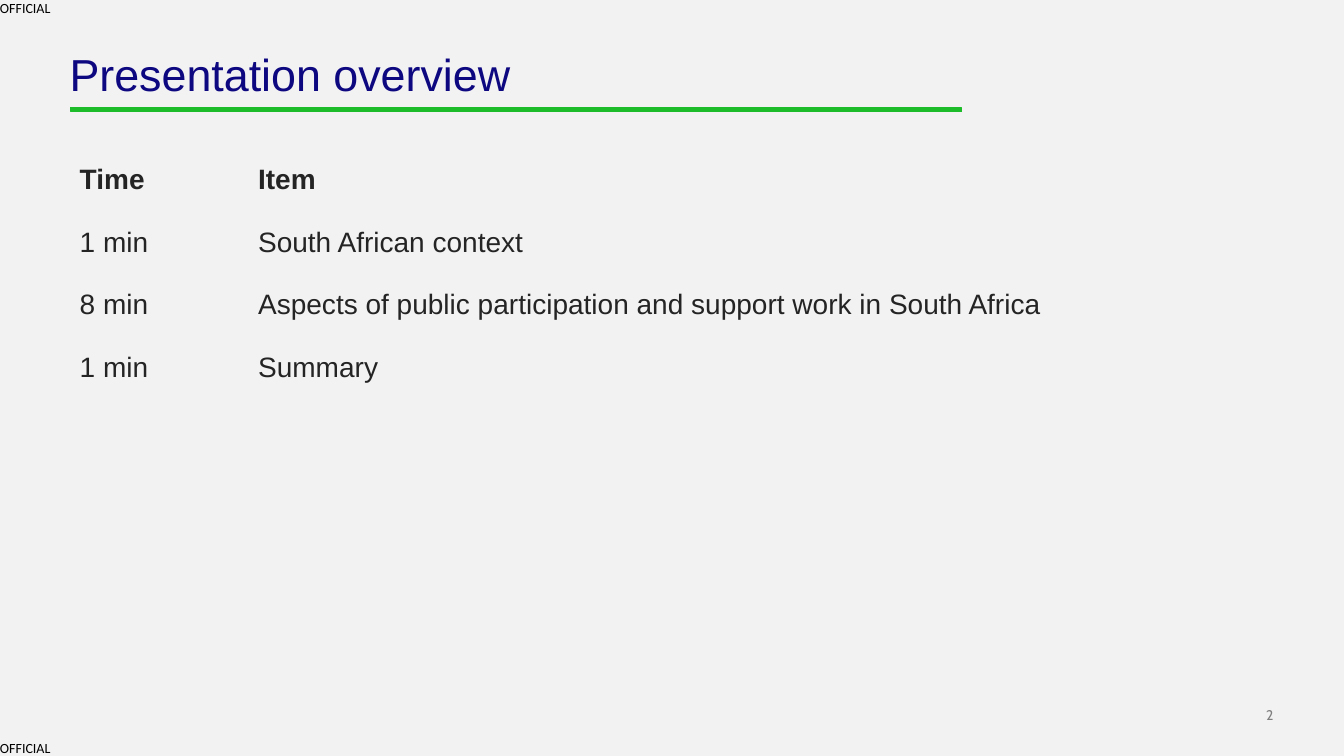
from pptx import Presentation
from pptx.dml.color import RGBColor
from pptx.enum.text import MSO_ANCHOR, PP_ALIGN
from pptx.oxml.ns import qn
from pptx.util import Pt

PX = 9144
NO_GRID_STYLE = "{2D5ABB26-0587-4C30-8999-92F81FD0307C}"
COLORS = {
    "background": "F2F2F2",
    "title": "0D0780",
    "rule": "1CBC2B",
    "body": "242424",
    "marking": "000000",
    "number": "7F7F7F",
}


def color(name):
    return RGBColor.from_string(COLORS[name])


def write(frame, text, font, size, tone, bold=False):
    paragraph = frame.paragraphs[0]
    run = paragraph.add_run()
    run.text = text
    style = {"name": font, "size": Pt(size), "bold": bold}
    for key, value in style.items():
        setattr(run.font, key, value)
    run.font.color.rgb = color(tone)
    return paragraph


deck = Presentation()
deck.slide_width, deck.slide_height = 1333 * PX, 750 * PX
slide = deck.slides.add_slide(deck.slide_layouts[6])
slide.background.fill.solid()
slide.background.fill.fore_color.rgb = color("background")

labels = [
    ("2", (1221, 701, 42, 17), "Cabin", 10, "number", PP_ALIGN.RIGHT, MSO_ANCHOR.BOTTOM, 1.0),
    ("OFFICIAL", (0, 734, 53, 16), "Calibri", 10, "marking", PP_ALIGN.LEFT, MSO_ANCHOR.TOP, 1.0),
    ("OFFICIAL", (0, 0, 53, 17), "Calibri", 10, "marking", PP_ALIGN.LEFT, MSO_ANCHOR.TOP, 1.0),
    ("Presentation overview", (69, 52, 886, 48), "Arial", 32, "title", PP_ALIGN.LEFT, MSO_ANCHOR.TOP, 0.9),
]
for text, place, font, size, tone, align, anchor, spacing in labels:
    frame = slide.shapes.add_textbox(*(n * PX for n in place)).text_frame
    layout = {
        "margin_left": 0, "margin_top": 0, "margin_right": 0, "margin_bottom": 0,
        "word_wrap": True, "vertical_anchor": anchor,
    }
    for key, value in layout.items():
        setattr(frame, key, value)
    paragraph = write(frame, text, font, size, tone)
    paragraph.alignment = align
    paragraph.line_spacing = spacing

outline = slide.shapes.build_freeform(70, 107, scale=PX)
outline.add_line_segments([(954, 107), (954, 111), (70, 111)], close=True)
rule = outline.convert_to_shape()
rule.shadow.inherit = False
rule.fill.solid()
rule.fill.fore_color.rgb = color("rule")
rule.line.color.rgb = color("rule")
rule.line.width = Pt(0.75)

agenda = [
    ("Time", "Item"),
    ("1 min", "South African context"),
    ("8 min", "Aspects of public participation and support work in South Africa"),
    ("1 min", "Summary"),
]
widths = (177, 986)
row_height = 62
holder = slide.shapes.add_table(
    len(agenda), len(widths), 69 * PX, 158 * PX, sum(widths) * PX, row_height * len(agenda) * PX
)
for style_id in holder.element.iter(qn("a:tableStyleId")):
    style_id.text = NO_GRID_STYLE
table = holder.table
table.horz_banding = False
for column, width in zip(table.columns, widths):
    column.width = width * PX
for r, entry in enumerate(agenda):
    table.rows[r].height = row_height * PX
    for c, text in enumerate(entry):
        cell = table.cell(r, c)
        cell.fill.background()
        write(cell.text_frame, text, "Arial", 20, "body", bold=r == 0)

deck.save("out.pptx")
